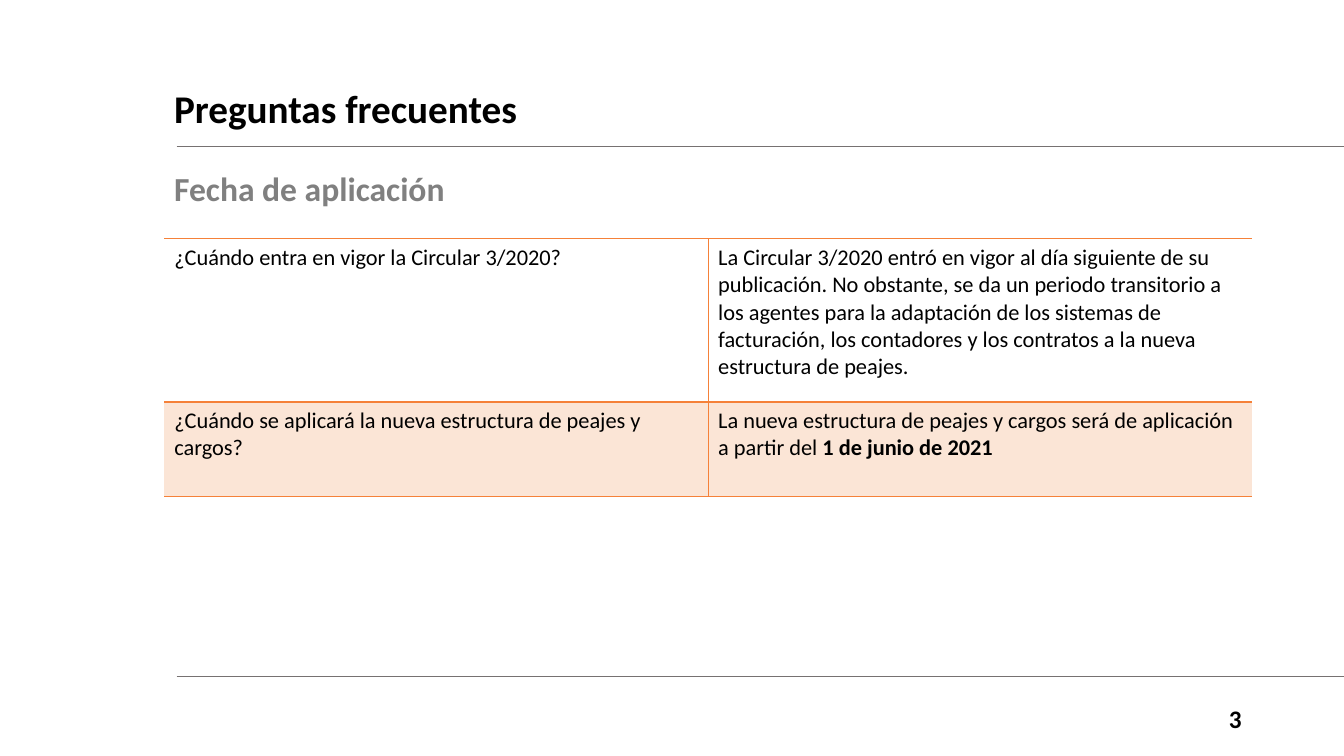
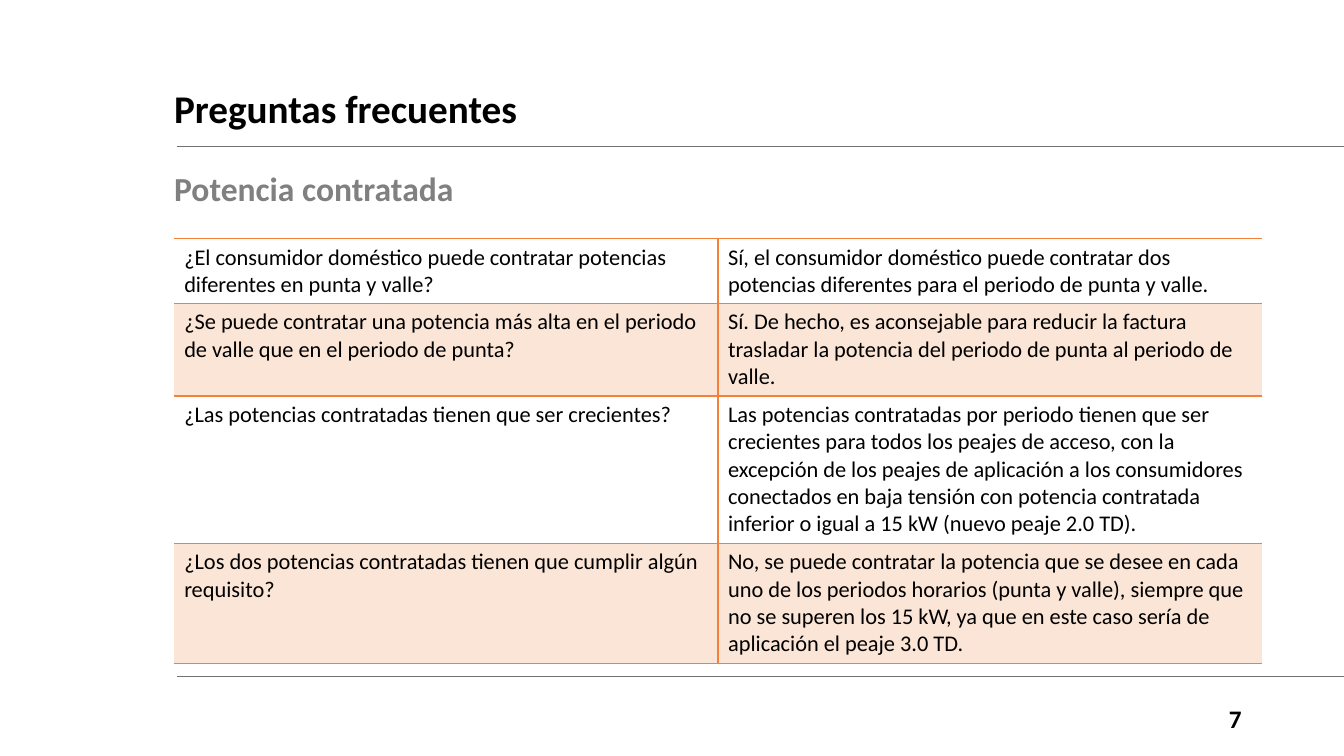
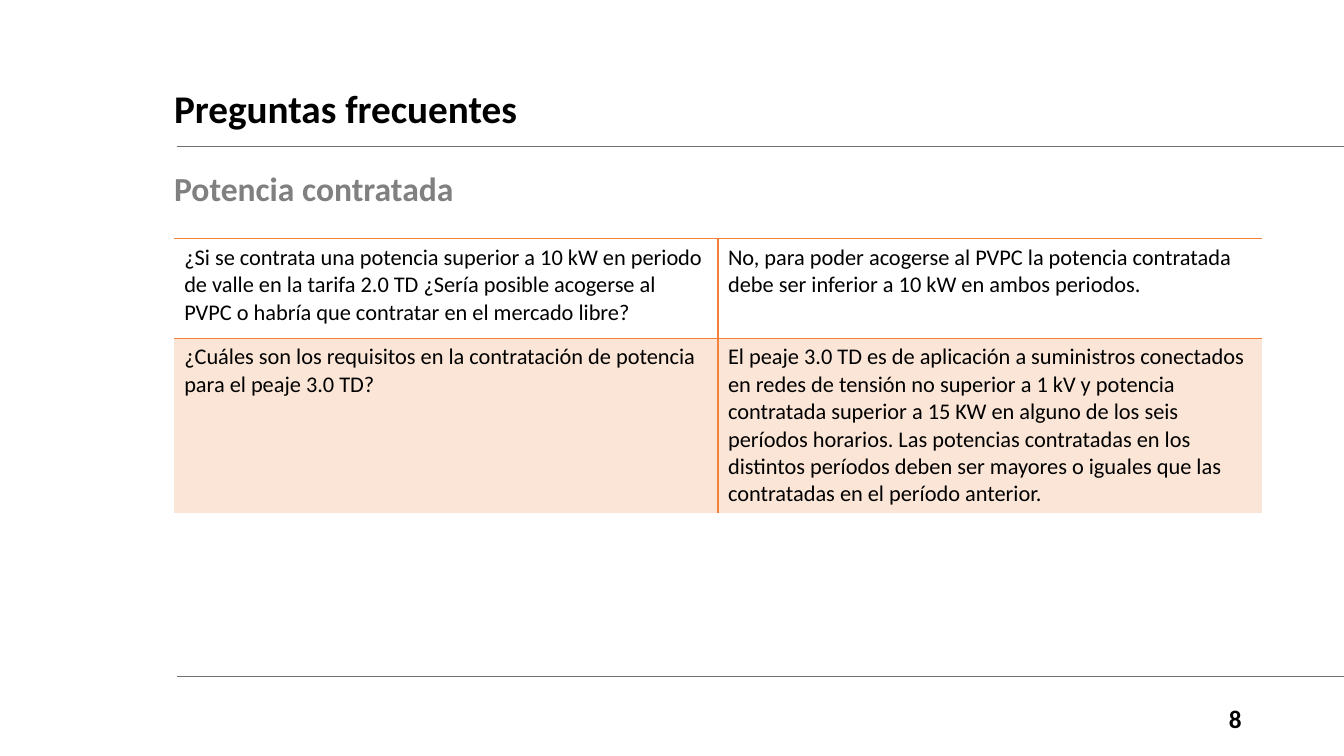
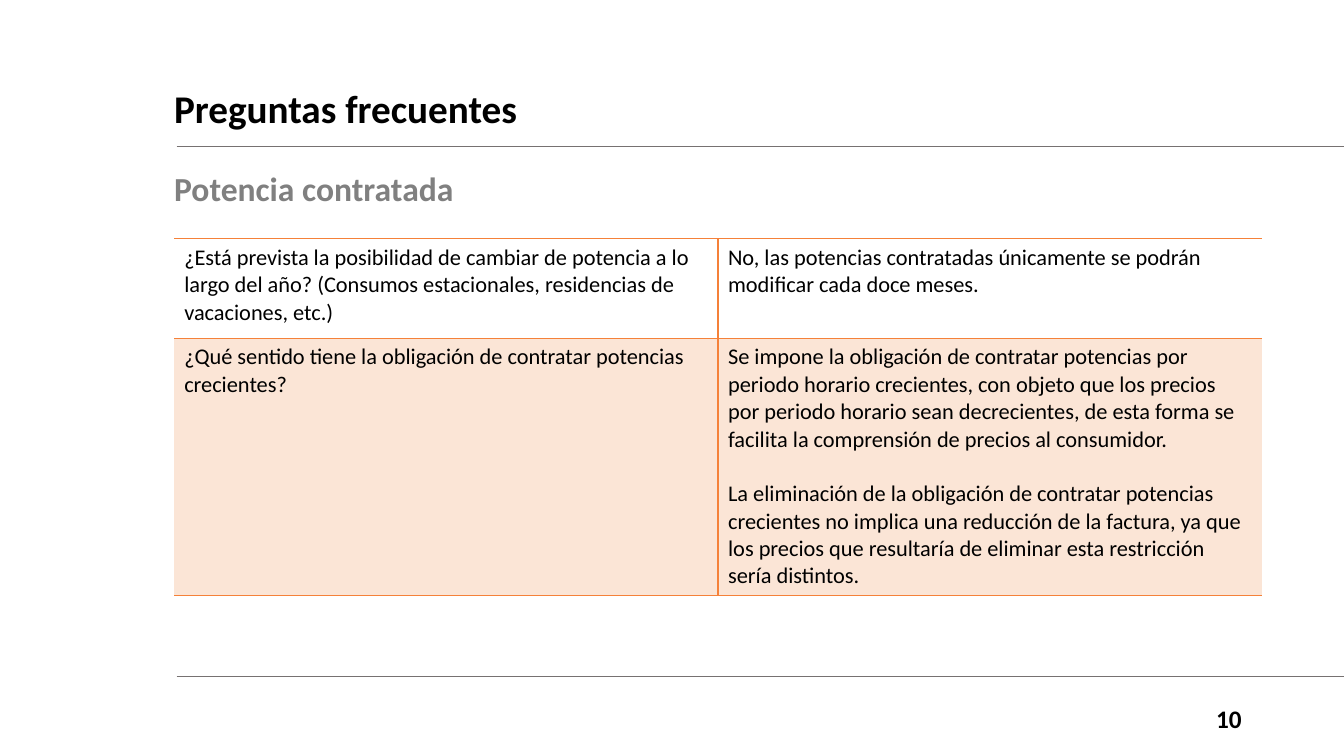
"""Build four slides of frequently asked questions about tolls and contracted power."""
from dataclasses import dataclass

from lxml.etree import SubElement
from pptx import Presentation
from pptx.dml.color import RGBColor
from pptx.enum.shapes import MSO_CONNECTOR
from pptx.enum.text import MSO_ANCHOR, PP_ALIGN
from pptx.oxml.ns import qn
from pptx.util import Cm, Pt

TITLE = "Preguntas frecuentes"
SLIDES = [
    {
        "number": "3",
        "subtitle": "Fecha de aplicación",
        "table_left": 4.14,
        "row_heights": [4.11, 2.39],
        "rows": [
            ("¿Cuándo entra en vigor la Circular 3/2020?",
             "La Circular 3/2020 entró en vigor al día siguiente de su publicación. No obstante, se da un "
             "periodo transitorio a los agentes para la adaptación de los sistemas de facturación, los "
             "contadores y los contratos a la nueva estructura de peajes."),
            ("¿Cuándo se aplicará la nueva estructura de peajes y cargos?",
             "La nueva estructura de peajes y cargos será de aplicación a partir del *1 de junio de 2021*"),
        ],
    },
    {
        "number": "7",
        "subtitle": "Potencia contratada",
        "row_heights": [1.63, 2.33, 3.71, 3.02],
        "rows": [
            ("¿El consumidor doméstico puede contratar potencias diferentes en punta y valle?",
             "Sí, el consumidor doméstico puede contratar dos potencias diferentes para el periodo de punta "
             "y valle."),
            ("¿Se puede contratar una potencia más alta en el periodo de valle que en el periodo de punta?",
             "Sí. De hecho, es aconsejable para reducir la factura trasladar la potencia del periodo de "
             "punta al periodo de valle."),
            ("¿Las potencias contratadas tienen que ser crecientes?",
             "Las potencias contratadas por periodo tienen que ser crecientes para todos los peajes de "
             "acceso, con la excepción de los peajes de aplicación a los consumidores conectados en baja "
             "tensión con potencia contratada inferior o igual a 15 kW (nuevo peaje 2.0 TD)."),
            ("¿Los dos potencias contratadas tienen que cumplir algún requisito?",
             "No, se puede contratar la potencia que se desee en cada uno de los periodos horarios (punta y "
             "valle), siempre que no se superen los 15 kW, ya que en este caso sería de aplicación el peaje "
             "3.0 TD."),
        ],
    },
    {
        "number": "8",
        "subtitle": "Potencia contratada",
        "row_heights": [2.51, 4.4],
        "closed": False,
        "rows": [
            ("¿Si se contrata una potencia superior a 10 kW en periodo de valle en la tarifa 2.0 TD ¿Sería "
             "posible acogerse al PVPC o habría que contratar en el mercado libre?",
             "No, para poder acogerse al PVPC la potencia contratada debe ser inferior a 10 kW en ambos "
             "periodos."),
            ("¿Cuáles son los requisitos en la contratación de potencia para el peaje 3.0 TD?",
             "El peaje 3.0 TD es de aplicación a suministros conectados en redes de tensión no superior a "
             "1 kV y potencia contratada superior a 15 KW en alguno de los seis períodos horarios. Las "
             "potencias contratadas en los distintos períodos deben ser mayores o iguales que las "
             "contratadas en el período anterior."),
        ],
    },
    {
        "number": "10",
        "subtitle": "Potencia contratada",
        "row_heights": [2.51, 6.48],
        "rows": [
            ("¿Está prevista la posibilidad de cambiar de potencia a lo largo del año? (Consumos "
             "estacionales, residencias de vacaciones, etc.)",
             "No, las potencias contratadas únicamente se podrán modificar cada doce meses."),
            ("¿Qué sentido tiene la obligación de contratar potencias crecientes?",
             "Se impone la obligación de contratar potencias por periodo horario crecientes, con objeto que "
             "los precios por periodo horario sean decrecientes, de esta forma se facilita la comprensión "
             "de precios al consumidor.\n"
             "La eliminación de la obligación de contratar potencias crecientes no implica una reducción de "
             "la factura, ya que los precios que resultaría de eliminar esta restricción sería distintos."),
        ],
    },
]


@dataclass(frozen=True)
class Theme:
    font: str = "Calibri"
    black: str = "000000"
    grey: str = "808080"
    rule: str = "767171"
    border: str = "F58139"
    band: str = "FBE5D6"
    title_size: float = 28
    subtitle_size: float = 24
    number_size: float = 18
    table_size: float = 16
    paragraph_gap: float = 19.5
    rule_width: float = 0.5
    border_width: float = 1


THEME = Theme()
SLIDE_WIDTH, SLIDE_HEIGHT = 33.87, 19.05
CONTENT_LEFT, CONTENT_WIDTH = 4.14, 27.41
RULE_LEFT, RULE_TOPS = 4.45, (3.68, 17.04)
TABLE_LEFT, TABLE_TOP = 4.39, 6.02


def write_text(frame, text, *, size, color=THEME.black, bold=False, align=PP_ALIGN.LEFT,
               line_spacing=1.0, gap=0):
    frame.word_wrap = True
    for index, line in enumerate(text.split("\n")):
        paragraph = frame.add_paragraph() if index else frame.paragraphs[0]
        paragraph.alignment = align
        paragraph.line_spacing = line_spacing
        if index:
            paragraph.space_before = Pt(gap)
        for position, part in enumerate(line.split("*")):
            if part:
                run = paragraph.add_run()
                run.text = part
                run.font.name = THEME.font
                run.font.size = Pt(size)
                run.font.bold = bold or position % 2 == 1
                run.font.color.rgb = RGBColor.from_string(color)


def add_text(slide, text, box, *, anchor=MSO_ANCHOR.MIDDLE, **text_format):
    frame = slide.shapes.add_textbox(*map(Cm, box)).text_frame
    frame.vertical_anchor = anchor
    write_text(frame, text, bold=True, **text_format)


def add_rule(slide, top):
    line = slide.shapes.add_connector(
        MSO_CONNECTOR.STRAIGHT, Cm(RULE_LEFT), Cm(top), Cm(SLIDE_WIDTH), Cm(top))
    line.line.color.rgb = RGBColor.from_string(THEME.rule)
    line.line.width = Pt(THEME.rule_width)
    SubElement(line.element.spPr, qn("a:effectLst"))


def set_borders(cell, **visible_sides):
    properties = cell._tc.get_or_add_tcPr()
    for side, visible in visible_sides.items():
        line = SubElement(properties, qn(f"a:ln{side}"), w=str(Pt(THEME.border_width)))
        if visible:
            fill = SubElement(line, qn("a:solidFill"))
            SubElement(fill, qn("a:srgbClr"), val=THEME.border)
        else:
            SubElement(line, qn("a:noFill"))


def add_questions(slide, rows, row_heights, left, closed):
    table = slide.shapes.add_table(
        len(rows), 2, Cm(left), Cm(TABLE_TOP), Cm(CONTENT_WIDTH), Cm(sum(row_heights))).table
    table.first_row = table.horz_banding = False
    for row_index, (texts, height) in enumerate(zip(rows, row_heights)):
        table.rows[row_index].height = Cm(height)
        for column, text in enumerate(texts):
            cell = table.cell(row_index, column)
            set_borders(cell, L=column == 1, R=column == 0, T=True,
                        B=closed or row_index < len(rows) - 1)
            if row_index % 2:
                cell.fill.solid()
                cell.fill.fore_color.rgb = RGBColor.from_string(THEME.band)
            else:
                cell.fill.background()
            write_text(cell.text_frame, text, size=THEME.table_size, gap=THEME.paragraph_gap)


def build_slide(presentation, content):
    slide = presentation.slides.add_slide(presentation.slide_layouts[6])
    for top in RULE_TOPS:
        add_rule(slide, top)
    add_text(slide, content["number"], (29.74, 17.6, 1.8, 1.02),
             size=THEME.number_size, align=PP_ALIGN.RIGHT)
    add_text(slide, TITLE, (CONTENT_LEFT, 1.73, CONTENT_WIDTH, 2.11),
             size=THEME.title_size, line_spacing=0.9)
    add_text(slide, content["subtitle"], (CONTENT_LEFT, 4.22, CONTENT_WIDTH, 1.4),
             anchor=MSO_ANCHOR.TOP, size=THEME.subtitle_size, color=THEME.grey, line_spacing=0.9)
    add_questions(slide, content["rows"], content["row_heights"],
                  content.get("table_left", TABLE_LEFT), content.get("closed", True))


def main():
    presentation = Presentation()
    presentation.slide_width = Cm(SLIDE_WIDTH)
    presentation.slide_height = Cm(SLIDE_HEIGHT)
    for content in SLIDES:
        build_slide(presentation, content)
    presentation.save("out.pptx")


if __name__ == "__main__":
    main()
